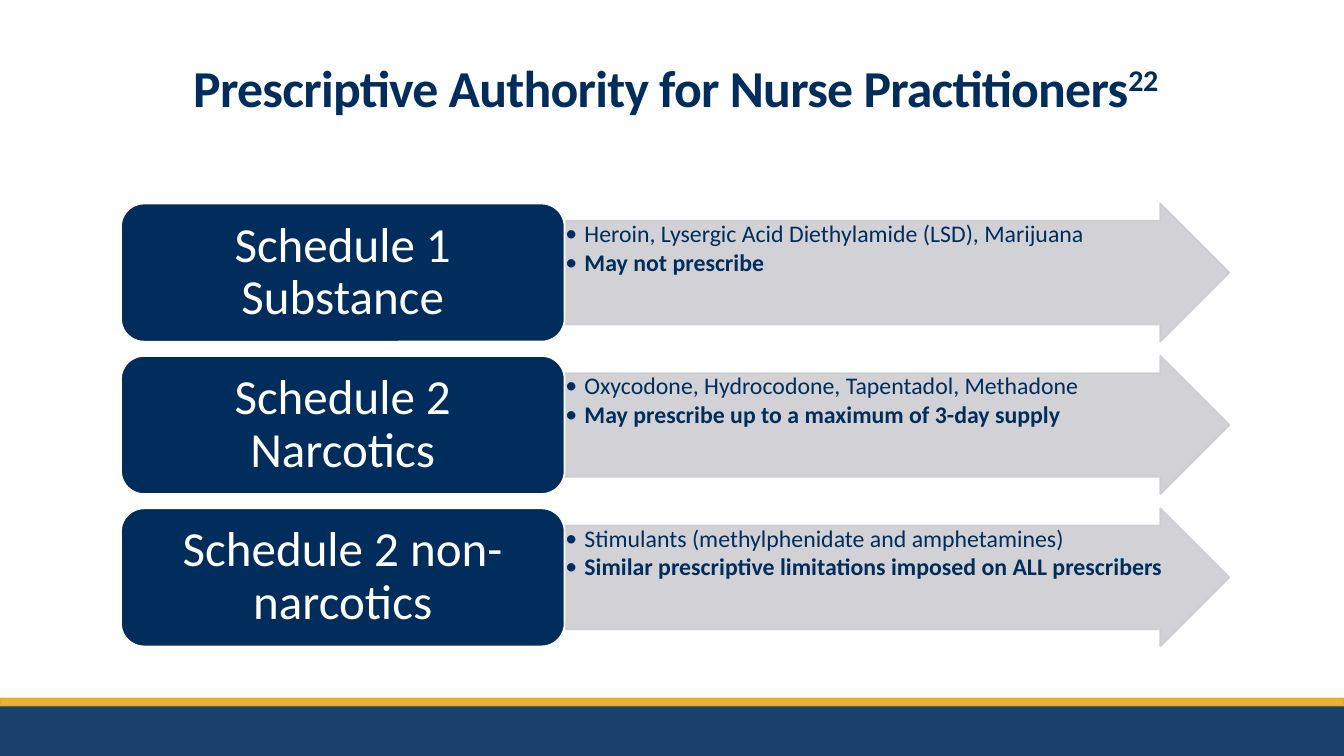
from lxml.etree import SubElement
from pptx import Presentation
from pptx.dml.color import RGBColor
from pptx.enum.shapes import MSO_SHAPE
from pptx.enum.text import MSO_ANCHOR, PP_ALIGN
from pptx.oxml.ns import qn
from pptx.util import Cm, Pt

NAVY, GOLD, GREY, WHITE = "002D5B", "E9AA21", "CCCDD2", "FFFFFF"
SCHEDULES = [
    ("Schedule 1 Substance",
     "Heroin, Lysergic Acid Diethylamide (LSD), Marijuana",
     "May not prescribe"),
    ("Schedule 2 Narcotics",
     "Oxycodone, Hydrocodone, Tapentadol, Methadone",
     "May prescribe up to a maximum of 3-day supply"),
    ("Schedule 2 non-narcotics",
     "Stimulants (methylphenidate and amphetamines)",
     "Similar prescriptive limitations imposed on ALL prescribers"),
]


def paint(part, color, opacity=100):
    part.solid()
    part.fore_color.rgb = RGBColor.from_string(color)
    if opacity < 100:
        srgb = part._xPr.find(".//" + qn("a:srgbClr"))
        SubElement(srgb, qn("a:alpha"), val=str(opacity * 1000))


def add_block(kind, left, top, width, height, fill, line=None, opacity=100):
    block = slide.shapes.add_shape(kind, Cm(left), Cm(top), Cm(width), Cm(height))
    block.shadow.inherit = False
    paint(block.fill, fill, opacity)
    if line:
        paint(block.line.fill, line, opacity)
        block.line.width = Pt(1.25)
    else:
        block.line.fill.background()
    return block


deck = Presentation()
deck.slide_width, deck.slide_height = Cm(33.87), Cm(19.05)
slide = deck.slides.add_slide(deck.slide_layouts[6])

add_block(MSO_SHAPE.RECTANGLE, 0, 17.78, 33.87, 1.27, NAVY, opacity=90)
add_block(MSO_SHAPE.RECTANGLE, 0, 17.6, 33.87, 0.18, GOLD, GOLD, 90)

title = slide.shapes.add_textbox(Cm(3.07), Cm(0.91), Cm(27.92), Cm(2.79))
title.text_frame.word_wrap = True
title.text_frame.vertical_anchor = MSO_ANCHOR.MIDDLE
heading = title.text_frame.paragraphs[0]
heading.alignment = PP_ALIGN.CENTER
heading.line_spacing = 0.85
for words, raised in (("Prescriptive Authority for Nurse Practitioners", 0), ("22", 30)):
    run = heading.add_run()
    run.text = words
    run.font.name, run.font.size, run.font.bold = "Calibri", Pt(37), True
    run.font.color.rgb = RGBColor.from_string(NAVY)
    run.font._element.set("spc", "-50")
    if raised:
        run.font._element.set("baseline", str(raised * 1000))

for row, (schedule, drugs, rule) in enumerate(SCHEDULES):
    top = 5.13 + row * 3.84

    arrow = add_block(MSO_SHAPE.RIGHT_ARROW, 14.22, top, 16.76, 3.48, GREY, GREY, 90)
    arrow.adjustments[0] = 0.75
    details = arrow.text_frame
    details.text = f"{drugs}\n{rule}"
    details.word_wrap = True
    details.vertical_anchor = MSO_ANCHOR.TOP
    details.margin_left = details.margin_right = Cm(0.03)
    details.margin_top = details.margin_bottom = Cm(0.03)
    for point in details.paragraphs:
        point.alignment = PP_ALIGN.LEFT
        point.line_spacing = 0.9
        point.space_after = Pt(2)
        layout = point._p.get_or_add_pPr()
        layout.set("marL", str(Cm(0.48)))
        layout.set("indent", str(-Cm(0.48)))
        SubElement(layout, qn("a:buFont"), typeface="Calibri")
        SubElement(layout, qn("a:buChar"), char="•")
        font = point.runs[0].font
        font.name, font.size = "Calibri", Pt(17)
        font.bold = point.text == rule
        font.color.rgb = RGBColor.from_string(NAVY)

    card = add_block(MSO_SHAPE.ROUNDED_RECTANGLE, 3.05, top, 11.18, 3.48, NAVY, WHITE)
    label = card.text_frame
    label.text = schedule
    label.word_wrap = True
    label.vertical_anchor = MSO_ANCHOR.MIDDLE
    label.margin_left = label.margin_right = Cm(0.38)
    label.margin_top = label.margin_bottom = Cm(0.18)
    label.paragraphs[0].alignment = PP_ALIGN.CENTER
    label.paragraphs[0].line_spacing = 0.9
    font = label.paragraphs[0].runs[0].font
    font.name, font.size = "Calibri", Pt(35)
    font.color.rgb = RGBColor.from_string(WHITE)

deck.save("out.pptx")
